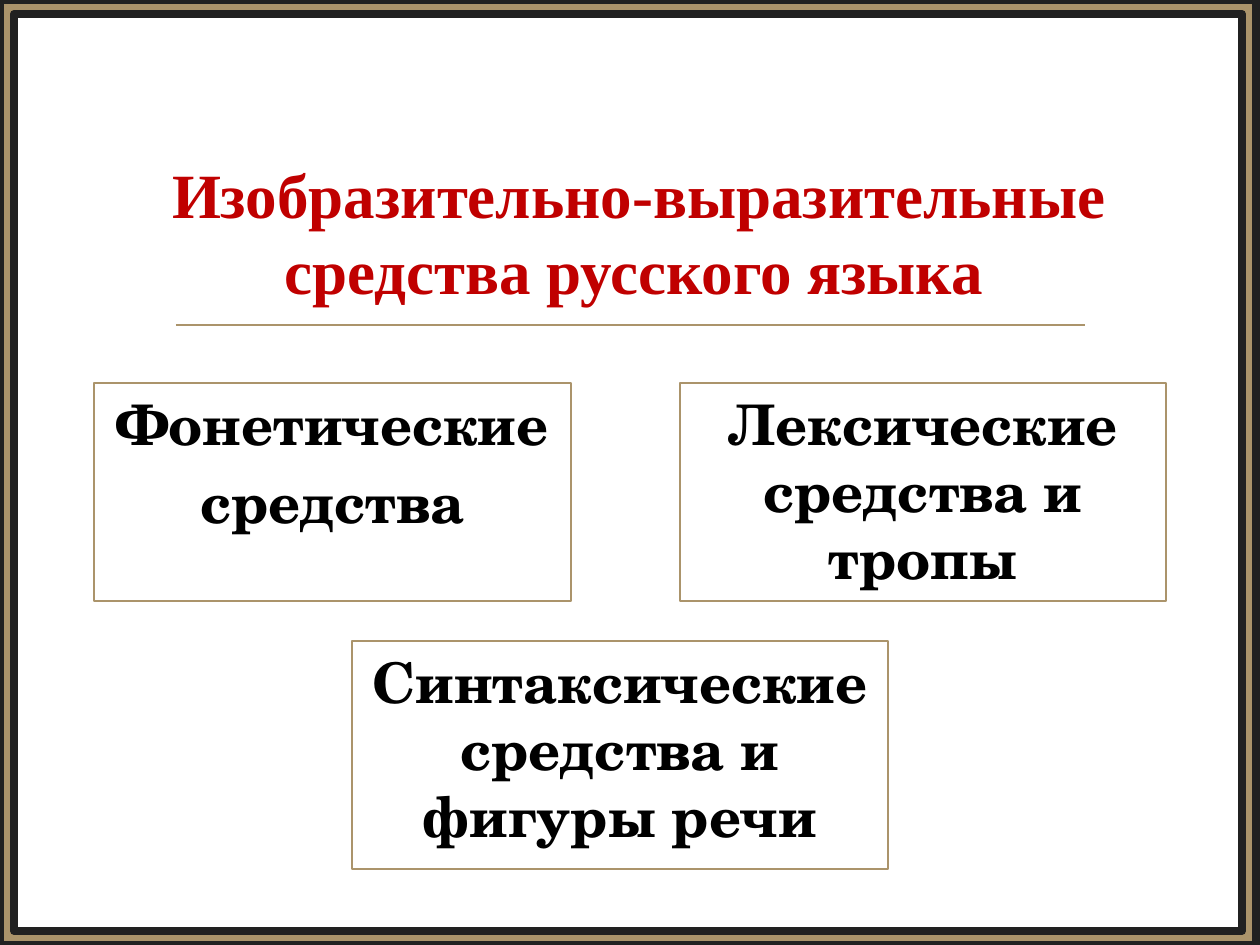
from dataclasses import dataclass

from lxml import etree
from pptx import Presentation
from pptx.dml.color import RGBColor
from pptx.enum.shapes import MSO_CONNECTOR, MSO_SHAPE
from pptx.enum.text import MSO_ANCHOR, PP_ALIGN
from pptx.oxml.ns import qn
from pptx.util import Emu, Pt

RECT, FRAME = MSO_SHAPE.RECTANGLE, MSO_SHAPE.FRAME
LINE = MSO_CONNECTOR.STRAIGHT
TOP, MID = MSO_ANCHOR.TOP, PP_ALIGN.CENTER
PX = 914400 // 126


@dataclass(frozen=True)
class Theme:
    white: str = "FFFFFF"
    black: str = "000000"
    red: str = "C00000"
    tan: str = "AB946B"
    dark: str = "212121"
    head_font: str = "Times New Roman"
    card_font: str = "TeX Gyre Schola"
    head_size: int = 36
    card_size: int = 32
    thin: float = 1.25
    thick: float = 4.75


@dataclass(frozen=True)
class Box:
    left: int
    top: int
    width: int
    height: int

    def emu(self) -> list:
        return [px(n) for n in (self.left, self.top, self.width, self.height)]


@dataclass(frozen=True)
class Card:
    box: Box
    lines: tuple


THEME = Theme()
HEAD = ("Изобразительно-выразительные", "средства русского языка")
CARDS = (
    Card(Box(94, 383, 477, 218), ("Фонетические", "средства")),
    Card(Box(680, 383, 486, 218), ("Лексические средства и тропы",)),
    Card(Box(352, 641, 536, 228), ("Синтаксические средства и фигуры речи",)),
)


def px(n: int) -> Emu:
    return Emu(n * PX)


def rgb(code: str) -> RGBColor:
    return RGBColor.from_string(code)


def apply(item, form: dict) -> None:
    for name, value in form.items():
        setattr(item, name, value)


def write(frame, lines: tuple, font: dict, para: dict, gap: float = 0) -> None:
    apply(frame, {"word_wrap": True, "vertical_anchor": TOP})
    for i, line in enumerate(lines):
        part = frame.add_paragraph() if i else frame.paragraphs[0]
        apply(part, para)
        if i and gap:
            part.space_before = Pt(gap)
        run = part.add_run()
        run.text = line
        apply(run.font, font)


def face(name: str, size: int, code: str) -> dict:
    return {"name": name, "size": Pt(size), "bold": True, "code": code}


def style(form: dict, frame) -> None:
    for part in frame.paragraphs:
        for run in part.runs:
            run.font.color.rgb = rgb(form["code"])


def label(frame, lines: tuple, form: dict, para: dict, gap: float = 0) -> None:
    font = {key: value for key, value in form.items() if key != "code"}
    write(frame, lines, font, para, gap)
    style(form, frame)


def panel(slide, kind, box: Box, fill: str, edge: str, weight: float):
    shape = slide.shapes.add_shape(kind, *box.emu())
    shape.shadow.inherit = False
    shape.fill.solid()
    shape.fill.fore_color.rgb = rgb(fill)
    shape.line.color.rgb = rgb(edge)
    shape.line.width = Pt(weight)
    return shape


def rule(slide, left: int, right: int, y: int) -> None:
    line = slide.shapes.add_connector(LINE, px(left), px(y), px(right), px(y))
    line.line.color.rgb = rgb(THEME.tan)
    line.line.width = Pt(THEME.thin)
    etree.SubElement(line._element.spPr, qn("a:effectLst"))


def title(slide, box: Box) -> None:
    frame = slide.shapes.add_textbox(*box.emu()).text_frame
    frame.margin_top = px(10)
    form = face(THEME.head_font, THEME.head_size, THEME.red)
    label(frame, HEAD, form, {"alignment": MID, "line_spacing": Pt(43.5)})
    # The first line sits slightly to the right
    frame.paragraphs[0]._p.get_or_add_pPr().set("marL", str(px(10)))


def draw(slide, card: Card) -> None:
    shape = panel(slide, RECT, card.box, THEME.white, THEME.tan, THEME.thin)
    form = face(THEME.card_font, THEME.card_size, THEME.black)
    label(shape.text_frame, card.lines, form, {"alignment": MID},
          gap=THEME.card_size * 0.2)


def main() -> None:
    deck = Presentation()
    apply(deck, {"slide_width": px(1260), "slide_height": px(945)})
    slide = deck.slides.add_slide(deck.slide_layouts[6])

    # Border and rule
    border = panel(slide, FRAME, Box(0, 0, 1256, 945),
                   THEME.tan, THEME.dark, THEME.thick)
    border.adjustments[0] = 0.015
    rule(slide, 176, 1085, 325)

    # Title and cards
    title(slide, Box(142, 145, 984, 165))
    for card in CARDS:
        draw(slide, card)

    deck.save("out.pptx")


if __name__ == "__main__":
    main()
